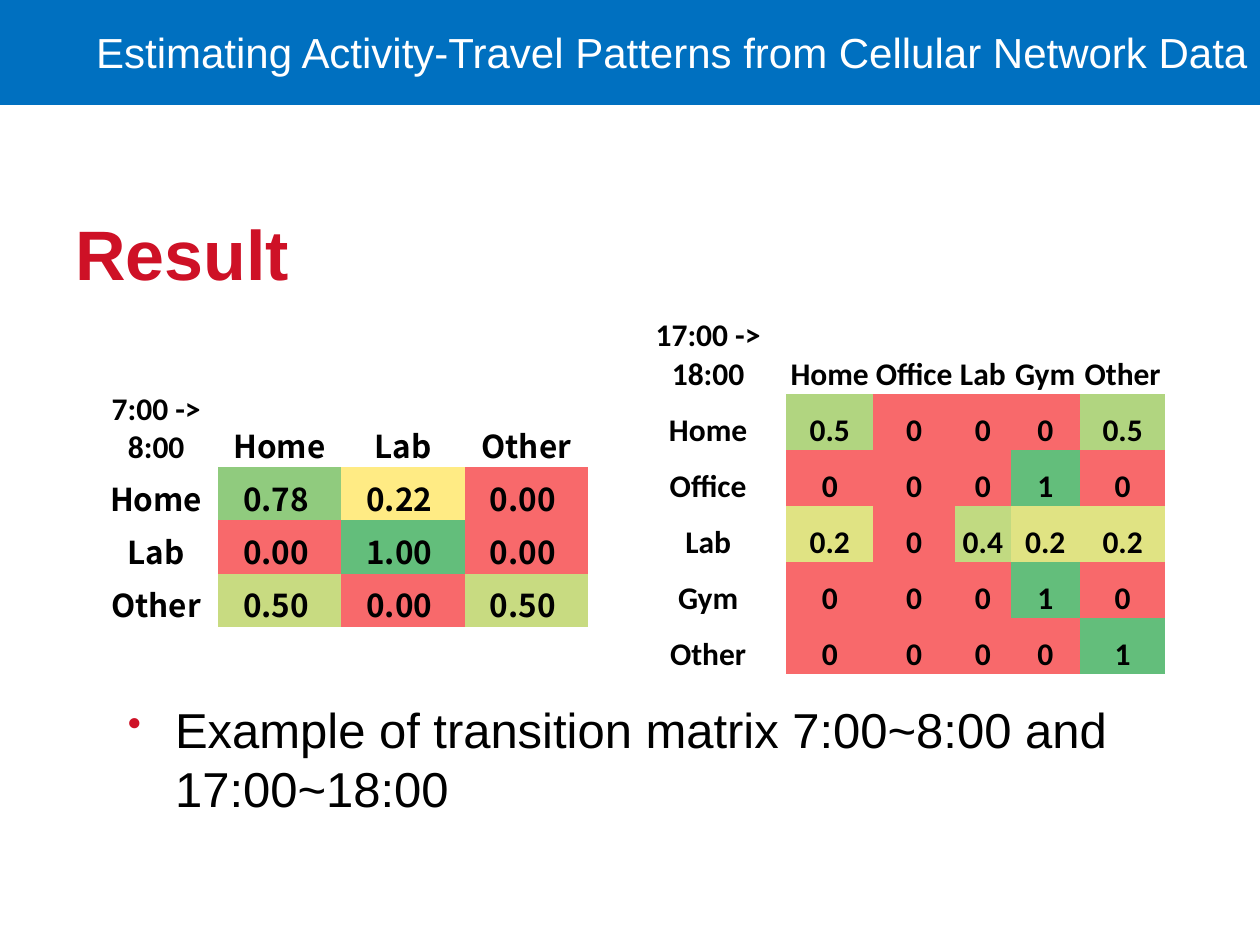
from lxml import etree
from pptx import Presentation
from pptx.dml.color import RGBColor
from pptx.enum.shapes import MSO_SHAPE
from pptx.enum.text import MSO_ANCHOR, PP_ALIGN
from pptx.oxml.ns import qn
from pptx.util import Pt

RECTANGLE = MSO_SHAPE.RECTANGLE
TOP, MIDDLE, BOTTOM = MSO_ANCHOR.TOP, MSO_ANCHOR.MIDDLE, MSO_ANCHOR.BOTTOM
LEFT, CENTER, RIGHT = PP_ALIGN.LEFT, PP_ALIGN.CENTER, PP_ALIGN.RIGHT
NO_STYLE_NO_GRID = "{2D5ABB26-0587-4C30-8999-92F81FD0307C}"

COLORS = {"band": "0070C0", "white": "FFFFFF", "black": "000000", "red": "CE1126"}

# Content
HEADER = "Estimating Activity-Travel Patterns from Cellular Network Data"
TITLE = "Result"
BULLET = "Example of transition matrix 7:00~8:00 and 17:00~18:00"

EVENING = {
    "corner": "17:00 -> 18:00",
    "places": ["Home", "Office", "Lab", "Gym", "Other"],
    "values": [
        ["0.5", "0", "0", "0", "0.5"],
        ["0", "0", "0", "1", "0"],
        ["0.2", "0", "0.4", "0.2", "0.2"],
        ["0", "0", "0", "1", "0"],
        ["0", "0", "0", "0", "1"],
    ],
    "scale": {"0": "F8696B", "0.2": "E0E383", "0.4": "C1DA81",
              "0.5": "B1D580", "1": "63BE7B"},
    "font": "Calibri",
    "position": (360, 180),
    "widths": [89.3, 49.7, 46.8, 31.7, 39.6, 48.9],
    "heights": [45] + [32] * 5,
}
MORNING = {
    "corner": "7:00 -> 8:00",
    "places": ["Home", "Lab", "Other"],
    "values": [
        ["0.78 ", "0.22 ", "0.00 "],
        ["0.00 ", "1.00 ", "0.00 "],
        ["0.50 ", "0.00 ", "0.50 "],
    ],
    "scale": {"0.00 ": "F8696B", "0.22 ": "FFEB84", "0.50 ": "C8DB81",
              "0.78 ": "90CB7E", "1.00 ": "63BE7B"},
    "font": "Noto Sans CJK SC",
    "position": (54, 222),
    "widths": [70.5] * 4,
    "heights": [45] + [30.4] * 3,
}


def rgb(name):
    return RGBColor.from_string(COLORS.get(name, name))


def add_span(para, text, size, color, font="Arial", bold=False):
    span = para.add_run()
    span.text = text
    span.font.size = Pt(size)
    span.font.name = font
    span.font.bold = bold
    span.font.color.rgb = rgb(color)


def add_text(page, place, text, size, color, align=LEFT, anchor=TOP, bold=False):
    box = page.shapes.add_textbox(*map(Pt, place))
    frame = box.text_frame
    frame.word_wrap = True
    frame.vertical_anchor = anchor
    para = frame.paragraphs[0]
    para.alignment = align
    add_span(para, text, size, color, bold=bold)
    return para


def add_bullet(para, indent):
    properties = para._p.get_or_add_pPr()
    properties.set("marL", str(Pt(indent)))
    properties.set("indent", str(-Pt(indent)))
    color = etree.SubElement(properties, qn("a:buClr"))
    etree.SubElement(color, qn("a:srgbClr"), val=COLORS["red"])
    etree.SubElement(properties, qn("a:buSzPct"), val="80000")
    etree.SubElement(properties, qn("a:buChar"), char="•")


def add_matrix(page, matrix):
    widths, heights = matrix["widths"], matrix["heights"]
    place = (*matrix["position"], sum(widths), sum(heights))
    table = page.shapes.add_table(len(heights), len(widths), *map(Pt, place)).table
    table.first_row = table.horz_banding = False
    table._tbl.tblPr.find(qn("a:tableStyleId")).text = NO_STYLE_NO_GRID
    for column, width in zip(table.columns, widths):
        column.width = Pt(width)
    for row, height in zip(table.rows, heights):
        row.height = Pt(height)

    rows = [[matrix["corner"]] + matrix["places"]]
    rows += [[place_name] + values
             for place_name, values in zip(matrix["places"], matrix["values"])]
    for r, texts in enumerate(rows):
        for c, text in enumerate(texts):
            cell = table.cell(r, c)
            cell.margin_left = cell.margin_right = cell.margin_top = Pt(0.75)
            cell.margin_bottom = Pt(0)
            cell.vertical_anchor = BOTTOM
            if r and c:
                cell.fill.solid()
                cell.fill.fore_color.rgb = rgb(matrix["scale"][text])
            else:
                cell.fill.background()
            para = cell.text_frame.paragraphs[0]
            para.alignment = CENTER
            font = matrix["font"] if r or c else "Calibri"
            add_span(para, text, 18, "black", font, bold=True)


def main():
    deck = Presentation()
    deck.slide_width, deck.slide_height = Pt(720), Pt(540)
    page = deck.slides.add_slide(deck.slide_layouts[6])

    # Header band
    band = page.shapes.add_shape(RECTANGLE, Pt(0), Pt(0), Pt(720), Pt(60))
    band.shadow.inherit = False
    band.fill.solid()
    band.fill.fore_color.rgb = rgb("band")
    band.line.fill.background()
    add_text(page, (30, 11.5, 690, 36), HEADER, 24, "white", align=RIGHT)

    # Title
    add_text(page, (36, 114, 648, 60), TITLE, 40, "red", anchor=MIDDLE, bold=True)

    # Transition matrices and their caption
    add_matrix(page, EVENING)
    caption = add_text(page, (66, 396, 618, 90), BULLET, 28, "black")
    add_bullet(caption, 27)
    add_matrix(page, MORNING)

    deck.save("out.pptx")


if __name__ == "__main__":
    main()
